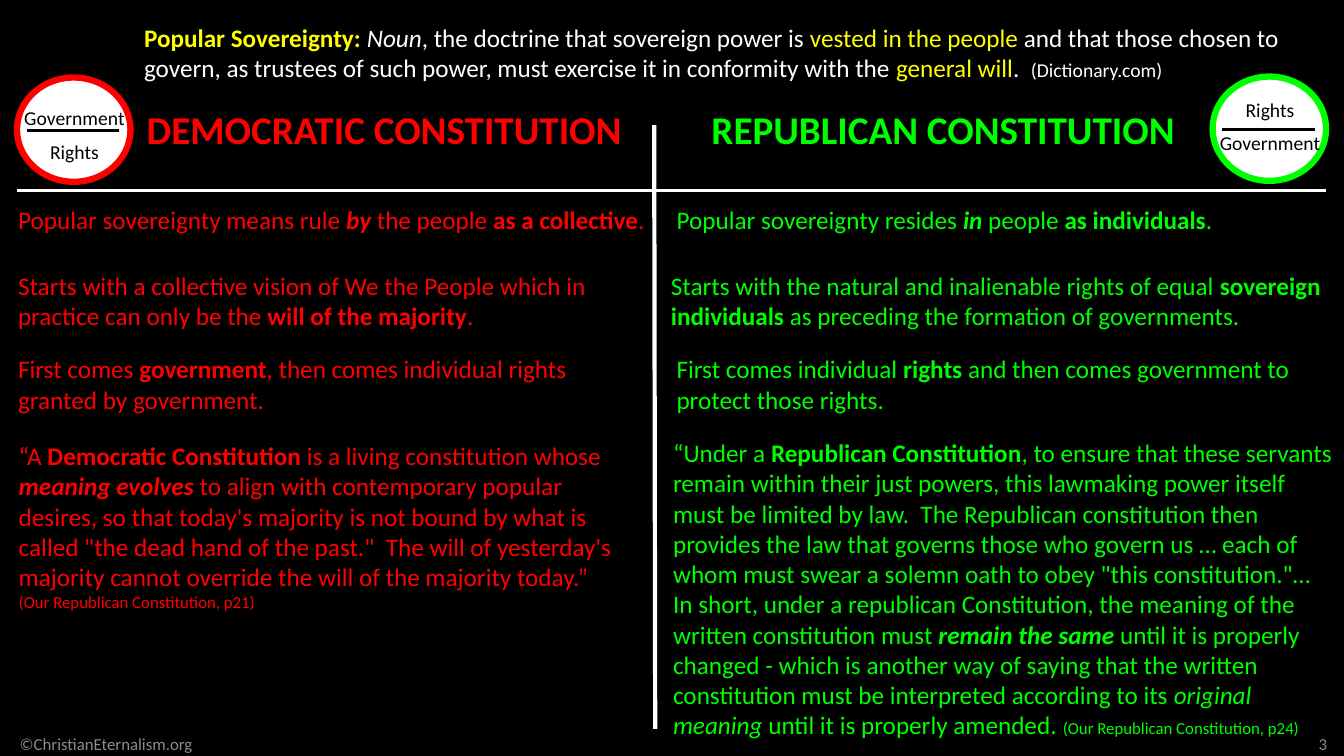
from lxml import etree
from pptx import Presentation
from pptx import util as u
from pptx.dml.color import RGBColor
from pptx.enum import shapes, text
from pptx.oxml.ns import qn

HUES = {"black": "000000", "white": "FFFFFF", "red": "FF0000", "green": "00FF00",
        "yellow": "FFFF00", "site": "8C8C8C", "page": "898989"}
LEFT, MID = text.PP_ALIGN.LEFT, text.PP_ALIGN.CENTER

DEMO = [
    (0, 0, 470, [[("Popular sovereignty means rule ",), ("by", "bi"), (" the people ",),
                  ("as a collective", "b"), (".",)]]),
    (0, 46.8, 448, [[("Starts with a collective vision of We the People which in practice "
                      "can only be the ",), ("will of the majority", "b"), (".",)]]),
    (0, 106.5, 427, [[("First comes ",), ("government", "b"),
                      (", then comes individual rights granted by government.",)]]),
    (0.5, 168.5, 445, [
        [("“A ",), ("Democratic Constitution ", "b"), ("is a living constitution whose ",),
         ("meaning evolves ", "bi"),
         ("to align with contemporary popular desires, so that today's majority is not bound "
          "by what is called \"the dead hand of the past.\"  The will of yesterday's majority "
          "cannot override the will of the majority today.”",)],
        [("(Our Republican Constitution, p21)", "", None, 12)]]),
]
REPUB = [
    (4, 0, 473, [[("Popular sovereignty resides ",), ("in", "bi"), (" people ",),
                  ("as individuals", "b"), (".",)]]),
    (0, 46.8, 482, [[("Starts with the natural and inalienable rights of equal ",),
                     ("sovereign individuals", "b"),
                     (" as preceding the formation of governments.",)]]),
    (4, 106.5, 474, [[("First comes individual ",), ("rights", "b"),
                      (" and then comes government to protect those rights.",)]]),
    (1.5, 166.3, 487, [
        [("“Under a ",), ("Republican Constitution", "b"),
         (", to ensure that these servants remain within their just powers, this lawmaking "
          "power itself must be limited by law.  The Republican constitution then provides "
          "the law that governs those who govern us … each of whom must swear a solemn oath "
          "to obey \"this constitution.\"… In short, under a republican Constitution, the "
          "meaning of the written constitution must ",), ("remain the same ", "bi"),
         ("until it is properly changed - which is another way of saying that the written "
          "constitution must be interpreted according to its ",), ("original meaning", "i"),
         (" until it is properly amended. ",),
         ("(Our Republican Constitution, p24)", "", None, 12)]]),
]


def hue(name):
    """Return the named colour."""
    return RGBColor.from_string(HUES[name])


def write(parts, box, paras, tint="white", size=18, align=LEFT, wrap=True, gap=0,
          anchor=text.MSO_ANCHOR.TOP):
    """Add a text box of paragraphs, each a list of (text, style, tint, size) runs."""
    frame = parts.add_textbox(*map(u.Pt, box)).text_frame
    frame.word_wrap = wrap
    frame.vertical_anchor = anchor
    for i, runs in enumerate(paras):
        para = frame.add_paragraph() if i else frame.paragraphs[0]
        para.alignment = align
        if i and gap:
            para.space_before = u.Pt(gap)
        for words, style, shade, pts in (run + ("", None, None)[len(run) - 1:] for run in runs):
            run = para.add_run()
            run.text = words
            run.font.name = "Calibri"
            run.font.size = u.Pt(pts or size)
            run.font.bold = "b" in style
            run.font.italic = "i" in style
            run.font.color.rgb = hue(shade or tint)


def rule(parts, ends, tint, width):
    """Draw a straight line between two points."""
    line = parts.add_connector(shapes.MSO_CONNECTOR.STRAIGHT, *map(u.Pt, ends))
    line.line.color.rgb = hue(tint)
    line.line.width = u.Pt(width)
    etree.SubElement(line._element.spPr, qn("a:effectLst"))


def badge(slide, box, tint, words, drop):
    """Draw a ringed disc with one word over another."""
    x, y, w, h = box
    parts = slide.shapes.add_group_shape().shapes
    disc = parts.add_shape(shapes.MSO_SHAPE.OVAL, *map(u.Pt, box))
    disc.shadow.inherit = False
    disc.fill.solid()
    disc.fill.fore_color.rgb = hue("white")
    disc.line.color.rgb = hue(tint)
    disc.line.width = u.Pt(4.5)
    write(parts, (x - 3, y + drop, w + 7, 48.2), [[(word,)] for word in words],
          tint="black", size=14, align=MID, wrap=False, gap=7.3)
    rule(parts, (x + 7, y + 38, x + w - 8, y + 38), "black", 2.25)


def column(slide, box, tint, title, head, points):
    """Place a heading and its points in one half of the slide."""
    x, y, w, h = box
    shift, wide = head
    write(slide.shapes, (x + shift, y, wide, 41), [[(title, "b")]],
          tint=tint, size=28, align=MID)
    for dx, dy, wide, paras in points:
        write(slide.shapes, (x + dx, y + 70.6 + dy, wide, 29), paras, tint=tint)


def intro(slide, box):
    """Write the definition across the top."""
    write(slide.shapes, box, [[
        ("Popular Sovereignty: ", "b", "yellow"), ("Noun", "i"),
        (", the doctrine that sovereign power is ",),
        ("vested in the people ", "", "yellow"),
        ("and that those chosen to govern, as trustees of such power, must exercise it in "
         "conformity with the ",),
        ("general will", "", "yellow"), (".  ",), ("(Dictionary.com)", "", None, 14)]])


def footer(slide, box):
    """Write the site and page number along the bottom."""
    x, y, w, h = box
    for left, wide, words, tint in ((x + 1.4, 149, "©ChristianEternalism.org", "site"),
                                    (x + w - 30, 30, "3", "page")):
        write(slide.shapes, (left, y, wide, h), [[(words,)]], tint=tint, size=12,
              align=MID, anchor=text.MSO_ANCHOR.MIDDLE)


def main():
    """Build and save the slide."""
    deck = Presentation()
    deck.slide_width, deck.slide_height = u.Pt(960), u.Pt(540)
    slide = deck.slides.add_slide(deck.slide_layouts[6])
    slide.background.fill.solid()
    slide.background.fill.fore_color.rgb = hue("black")
    footer(slide, (0, 522, 960, 18))
    intro(slide, (95.8, 12.2, 851, 51))
    rule(slide.shapes, (467.3, 89.3, 468, 520.6), "white", 3)
    rule(slide.shapes, (12.2, 136.1, 946.8, 136.1), "white", 2.25)
    column(slide, (5.8, 72, 470, 468), "red", "DEMOCRATIC CONSTITUTION", (89.2, 358.6), DEMO)
    column(slide, (472.2, 72, 488, 468), "green", "REPUBLICAN CONSTITUTION", (16, 370.8), REPUB)
    badge(slide, (12.2, 55.4, 81, 74.5), "red", ("Government", "Rights"), 16.6)
    badge(slide, (866.2, 54.7, 81, 74.5), "green", ("Rights", "Government"), 11.5)
    deck.save("out.pptx")


if __name__ == "__main__":
    main()
